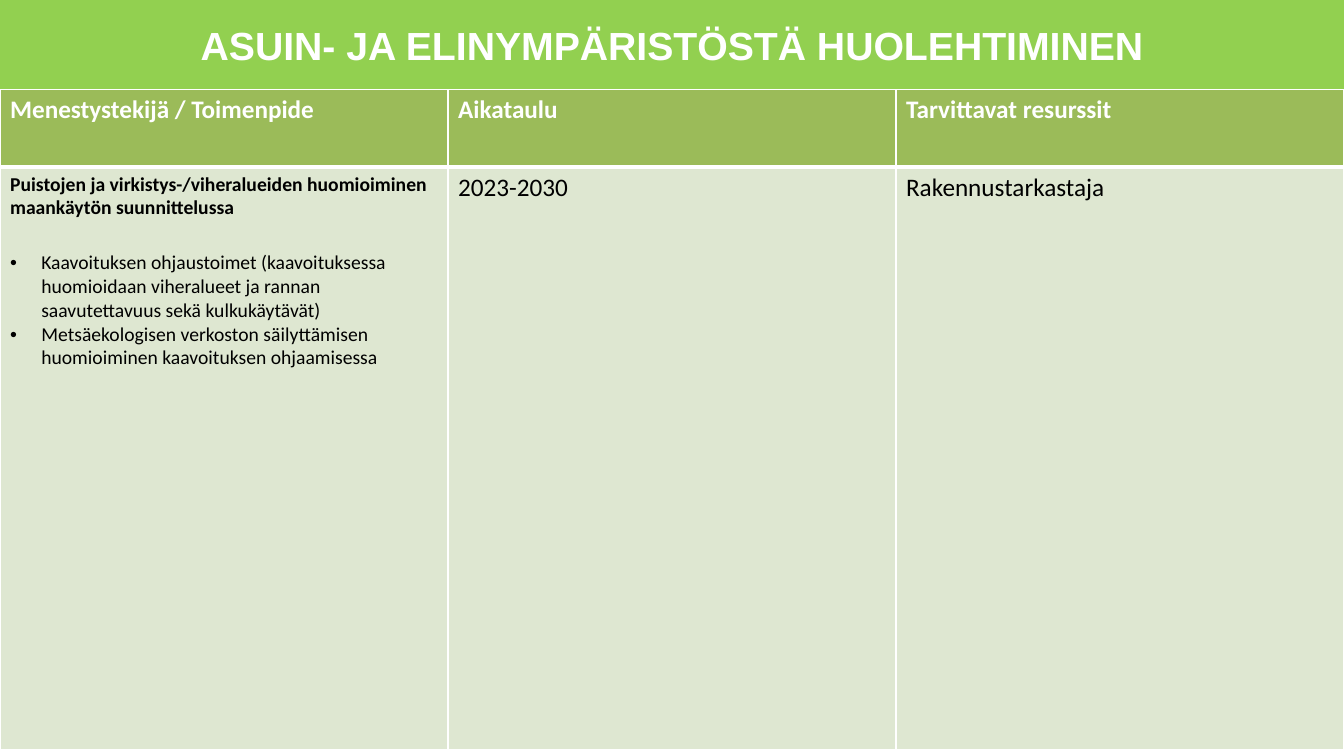
from pptx import Presentation, util as u
from pptx.dml.color import RGBColor
from pptx.enum import shapes, text
from pptx.oxml import parse_xml
from pptx.oxml.ns import nsdecls

TITLE = "ASUIN- JA ELINYMPÄRISTÖSTÄ HUOLEHTIMINEN"
HEADS = ["Menestystekijä / Toimenpide", "Aikataulu", "Tarvittavat resurssit"]
GOAL = "Puistojen ja virkistys-/viheralueiden huomioiminen maankäytön suunnittelussa"
STEPS = [
    "Kaavoituksen ohjaustoimet (kaavoituksessa huomioidaan viheralueet ja rannan saavutettavuus sekä kulkukäytävät)",
    "Metsäekologisen verkoston säilyttämisen huomioiminen kaavoituksen ohjaamisessa",
]
STYLES = {
    "head": dict(size=18, bold=True, ink="white"),
    "goal": dict(size=14, bold=True, ink="black"),
    "step": dict(size=14, bold=False, ink="black"),
    "body": dict(size=18, bold=False, ink="black"),
}
ROWS = [
    [[("head", head)] for head in HEADS],
    [
        [("goal", GOAL)] + [("step", step) for step in STEPS],
        [("body", "2023-2030")],
        [("body", "Rakennustarkastaja")],
    ],
]
HEX = {"white": "FFFFFF", "black": "000000", "band": "92D050",
       "head": "9BBB59", "body": "DEE7D1"}
FILLS = ["head", "body"]
WIDE, HIGH = 13.33, 7.5
BAND = 0.89
TALL = [0.77, 5.78]


def tint(name):
    return RGBColor.from_string(HEX[name])


def write(para, words, size, bold, ink, face="Calibri"):
    run = para.add_run()
    run.text = words
    font = run.font
    font.name, font.size, font.bold = face, u.Pt(size), bold
    font.color.rgb = tint(ink)


def bullet(para):
    props = para._p.get_or_add_pPr()
    props.set("marL", str(u.Inches(0.31)))
    props.set("indent", str(-u.Inches(0.31)))
    for tag in ('buFont {} typeface="Arial"', 'buChar {} char="•"'):
        props.append(parse_xml(f"<a:{tag.format(nsdecls('a'))}/>"))


def border(cell, row):
    for side in "LRTB":
        thick = 3 if (row, side) in ((0, "B"), (1, "T")) else 1
        cell._tc.get_or_add_tcPr().append(parse_xml(
            f'<a:ln{side} {nsdecls("a")} w="{u.Pt(thick)}"><a:solidFill>'
            f'<a:srgbClr val="{HEX["white"]}"/></a:solidFill></a:ln{side}>'))


def fill_cell(cell, row, items):
    border(cell, row)
    cell.fill.solid()
    cell.fill.fore_color.rgb = tint(FILLS[row])
    frame = cell.text_frame
    last = None
    for num, (kind, words) in enumerate(items):
        para = frame.add_paragraph() if num else frame.paragraphs[0]
        if kind == "step":
            if last == "goal":
                para.space_before = u.Pt(22)
            bullet(para)
        write(para, words, **STYLES[kind])
        last = kind


def main():
    deck = Presentation()
    deck.slide_width, deck.slide_height = u.Inches(WIDE), u.Inches(HIGH)
    slide = deck.slides.add_slide(deck.slide_layouts[6])

    band = slide.shapes.add_shape(shapes.MSO_SHAPE.RECTANGLE, 0, 0,
                                  deck.slide_width, u.Inches(BAND))
    band.shadow.inherit = False
    band.fill.solid()
    band.fill.fore_color.rgb = tint("band")
    band.line.fill.background()

    title = slide.shapes.add_textbox(u.Inches(WIDE * 0.05), 0,
                                     u.Inches(WIDE * 0.9), u.Inches(BAND))
    frame = title.text_frame
    frame.word_wrap = True
    frame.vertical_anchor = text.MSO_ANCHOR.MIDDLE
    para = frame.paragraphs[0]
    para.alignment = text.PP_ALIGN.CENTER
    write(para, TITLE, 28, True, "white", "Arial")

    grid = slide.shapes.add_table(len(ROWS), len(HEADS), 0, u.Inches(BAND),
                                  deck.slide_width, u.Inches(sum(TALL))).table
    for col in grid.columns:
        col.width = u.Inches(WIDE / len(HEADS))
    for row, cells in enumerate(ROWS):
        grid.rows[row].height = u.Inches(TALL[row])
        for col, items in enumerate(cells):
            fill_cell(grid.cell(row, col), row, items)

    deck.save("out.pptx")


if __name__ == "__main__":
    main()
